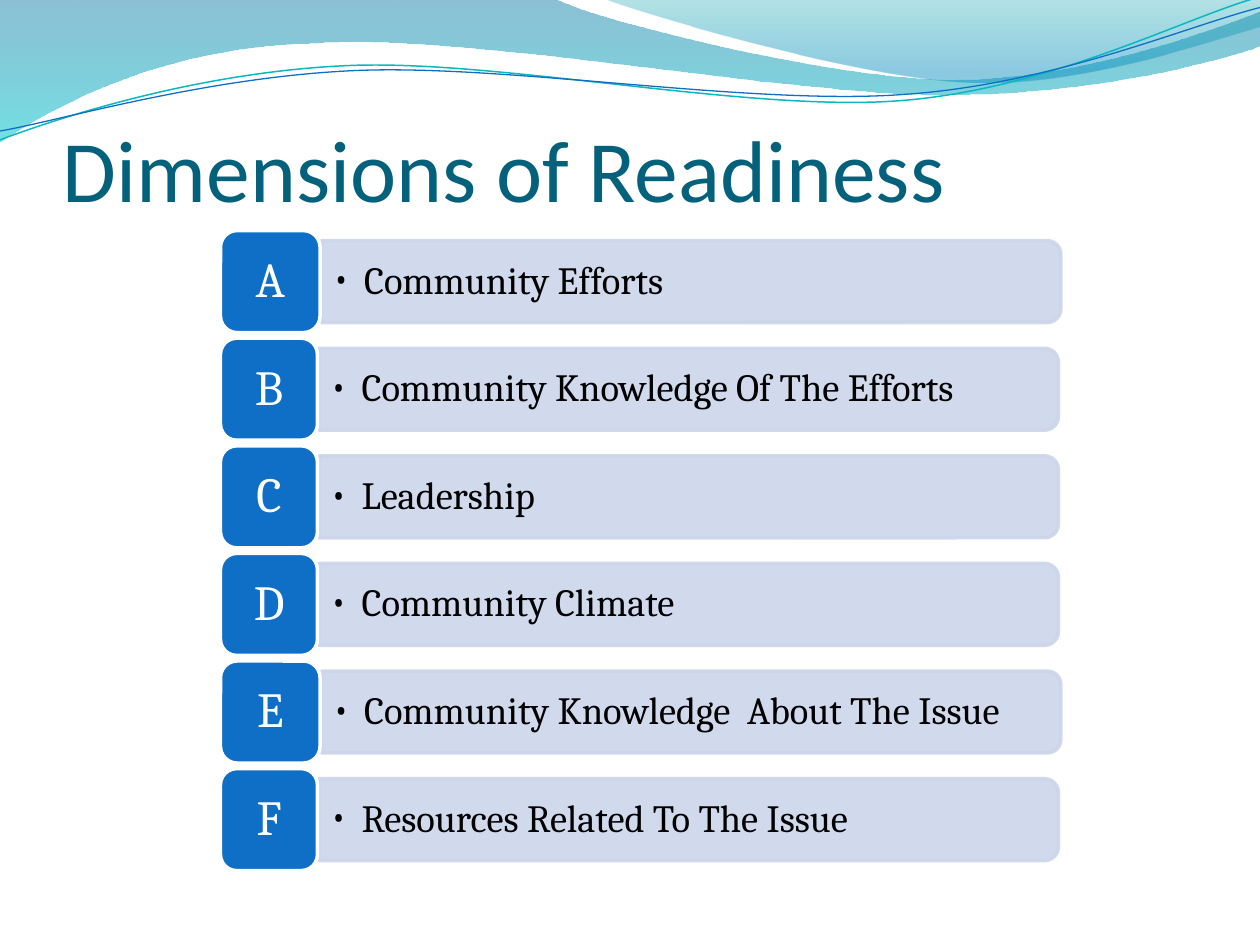
import dataclasses
import math
import typing

import pptx
import pptx.dml.color
import pptx.enum.shapes
import pptx.enum.text
import pptx.oxml
import pptx.oxml.ns
import pptx.util

RGB = pptx.dml.color.RGBColor
SHAPES = pptx.enum.shapes.MSO_SHAPE
ANCHOR = pptx.enum.text.MSO_ANCHOR
ALIGN = pptx.enum.text.PP_ALIGN

DEEP_BLUE = RGB(0x00, 0x74, 0xA1)
AQUA = RGB(0x00, 0xC6, 0xCF)
SEA_GREEN = RGB(0x00, 0xA1, 0xA9)
SKY_BLUE = RGB(0x00, 0x8B, 0xBF)
TEAL = RGB(0x0A, 0xB8, 0xBF)
BLUE = RGB(0x0F, 0x6F, 0xC6)
TITLE_TEAL = RGB(0x04, 0x61, 0x7B)
PALE_BLUE = RGB(0xCC, 0xD5, 0xEA)
WHITE = RGB(0xFF, 0xFF, 0xFF)
BLACK = RGB(0x00, 0x00, 0x00)

SLIDE_WIDTH = pptx.util.Inches(10)
SLIDE_HEIGHT = pptx.util.Inches(7.5)
CELL = SLIDE_WIDTH / 10
LINE_TILT = 2.7

LIST_LEFT = 1.75
LIST_TOP = 1.83
ROW_PITCH = 4.27 / 5
TILE_HEIGHT = 0.81
TILE_INSET = 0.04
BAR_WIDTH = 5.87
BAR_HEIGHT = 0.65
BAR_TEXT_WIDTH = 5.83
BAR_TEXT_HEIGHT = 0.59


@dataclasses.dataclass(frozen=True)
class Stop:
    position: float
    color: RGB
    opacity: int


@dataclasses.dataclass(frozen=True)
class Wave:
    start: tuple[float, float]
    segments: tuple[tuple[float, ...], ...]
    stops: tuple[Stop, ...] = ()
    line_color: typing.Optional[RGB] = None
    line_width: float = 0
    pivot: tuple[float, float] = (0, 0)


@dataclasses.dataclass(frozen=True)
class Dimension:
    letter: str
    label: str
    tile_width: float = 0.77


WAVES = (
    Wave((0, 0), ((4.4, -0.01), (4.76, 0.17, 6.64, 0.63, 7.58, 0.63),
                  (8.53, 0.63, 9.58, 0.26, 10, 0.09), (10.01, 0.36),
                  (9.83, 0.44, 8.7, 0.76, 7.46, 0.75),
                  (6.22, 0.75, 3.82, 0.28, 2.57, 0.34),
                  (1.29, 0.36, 0.46, 0.83, -0.01, 1.13), (0, 0)),
         stops=(Stop(0, DEEP_BLUE, 45), Stop(1, AQUA, 55))),
    Wave((4.79, -0.01), ((5.09, 0.11, 6.82, 0.62, 7.69, 0.65),
                         (8.56, 0.69, 9.61, 0.32, 10, 0.21), (10, 0), (4.79, -0.01)),
         stops=(Stop(0, SEA_GREEN, 30), Stop(0.8, SKY_BLUE, 45))),
    Wave((0, 1.11), ((0.48, 0.93, 1.58, 0.57, 2.77, 0.52),
                     (3.95, 0.47, 5.93, 0.89, 7.13, 0.8),
                     (8.33, 0.71, 9.38, 0.15, 9.98, -0.02)),
         line_color=TEAL, line_width=0.85, pivot=(4.99, 0.58)),
    Wave((0, 1.04), ((0.47, 0.96, 1.64, 0.61, 2.83, 0.56),
                     (4.03, 0.51, 5.97, 0.84, 7.17, 0.75),
                     (8.36, 0.67, 9.41, 0.21, 10, 0.06)),
         line_color=BLUE, line_width=0.75, pivot=(5, 0.59)),
)

DIMENSIONS = (
    Dimension("A", "Community Efforts", 0.79),
    Dimension("B", "Community Knowledge Of The Efforts"),
    Dimension("C", "Leadership"),
    Dimension("D", "Community Climate"),
    Dimension("E", "Community Knowledge  About The Issue", 0.79),
    Dimension("F", "Resources Related To The Issue"),
)


def cells(*lengths: float) -> list[int]:
    return [round(length * CELL) for length in lengths]


def element(tag: str, attributes: str = ""):
    return pptx.oxml.parse_xml(f'<a:{tag} {pptx.oxml.ns.nsdecls("a")} {attributes}/>')


def set_opacity(shape, *percents: int) -> None:
    colors = shape.element.spPr.iter(pptx.oxml.ns.qn("a:srgbClr"))
    for color, percent in zip(colors, percents):
        color.append(element("alpha", f'val="{percent * 1000}"'))


def write(slide, box: tuple[float, ...], text: str, *, font: str, size: float, color: RGB,
          anchor, insets: tuple[float, ...], align=ALIGN.LEFT, spacing: float = 1,
          bullet_indent: float = 0) -> None:
    frame = slide.shapes.add_textbox(*cells(*box)).text_frame
    frame.word_wrap = True
    frame.vertical_anchor = anchor
    (frame.margin_left, frame.margin_top,
     frame.margin_right, frame.margin_bottom) = cells(*insets)
    paragraph = frame.paragraphs[0]
    paragraph.alignment = align
    paragraph.line_spacing = spacing
    run = paragraph.add_run()
    run.text = text
    run.font.name = font
    run.font.size = pptx.util.Pt(size)
    run.font.color.rgb = color
    if bullet_indent:
        paragraph.level = 1
        properties = paragraph._p.get_or_add_pPr()
        indent = cells(bullet_indent)[0]
        properties.set("marL", str(indent))
        properties.set("indent", str(-indent))
        properties.append(element("buFont", f'typeface="{font}"'))
        properties.append(element("buChar", 'char="•"'))


def turn(point: tuple[float, float], pivot: tuple[float, float]) -> list[int]:
    angle = math.radians(LINE_TILT)
    x, y = point[0] - pivot[0], point[1] - pivot[1]
    return cells(pivot[0] + x * math.cos(angle) - y * math.sin(angle),
                 pivot[1] + x * math.sin(angle) + y * math.cos(angle))


def bend(shape, segments: tuple[tuple[float, ...], ...]) -> None:
    corners = iter(list(shape.element.spPr.iter(pptx.oxml.ns.qn("a:lnTo"))))
    for segment in segments:
        first = next(corners)
        if len(segment) == 6:
            curve = element("cubicBezTo")
            first.addprevious(curve)
            for corner in (first, next(corners), next(corners)):
                curve.append(corner[0])
                corner.getparent().remove(corner)


def draw_wave(slide, wave: Wave) -> None:
    points = [wave.start] + [segment[i:i + 2] for segment in wave.segments
                             for i in range(0, len(segment), 2)]
    start, *rest = [cells(*point) if wave.stops else turn(point, wave.pivot) for point in points]
    builder = slide.shapes.build_freeform(*start, scale=1.0)
    builder.add_line_segments(rest, close=bool(wave.stops))
    shape = builder.convert_to_shape()
    bend(shape, wave.segments)
    shape.shadow.inherit = False
    if wave.stops:
        shape.line.fill.background()
        shape.fill.gradient()
        shape.fill.gradient_angle = 270
        for target, stop in zip(shape.fill.gradient_stops, wave.stops):
            target.position = stop.position
            target.color.rgb = stop.color
        set_opacity(shape, *(stop.opacity for stop in wave.stops))
    else:
        shape.rotation = 360 - LINE_TILT
        shape.fill.background()
        shape.line.color.rgb = wave.line_color
        shape.line.width = pptx.util.Pt(wave.line_width)


def draw_block(slide, preset, box: tuple[float, ...], fill: RGB, line: RGB):
    block = slide.shapes.add_shape(preset, *cells(*box))
    block.shadow.inherit = False
    block.fill.solid()
    block.fill.fore_color.rgb = fill
    block.line.color.rgb = line
    block.line.width = pptx.util.Pt(2)
    return block


def draw_dimension(slide, dimension: Dimension, row: int) -> None:
    top = LIST_TOP + row * ROW_PITCH
    middle = top + TILE_HEIGHT / 2
    width = dimension.tile_width
    bar_left = LIST_LEFT + width + 0.01
    bar_box = (bar_left + (BAR_WIDTH - BAR_HEIGHT) / 2, middle - BAR_WIDTH / 2,
               BAR_HEIGHT, BAR_WIDTH)
    bar = draw_block(slide, SHAPES.ROUND_2_SAME_RECTANGLE, bar_box, PALE_BLUE, PALE_BLUE)
    bar.rotation = 90
    set_opacity(bar, 90, 90)
    label_box = (bar_left, middle - BAR_TEXT_HEIGHT / 2, BAR_TEXT_WIDTH, BAR_TEXT_HEIGHT)
    write(slide, label_box, dimension.label, font="Cambria", size=22, color=BLACK,
          anchor=ANCHOR.MIDDLE, insets=(0.09, 0.05, 0.09, 0.05), spacing=0.9, bullet_indent=0.25)
    tile_box = (LIST_LEFT, top, width, TILE_HEIGHT)
    draw_block(slide, SHAPES.ROUNDED_RECTANGLE, tile_box, BLUE, WHITE)
    letter_box = (LIST_LEFT + TILE_INSET, top + TILE_INSET,
                  width - 2 * TILE_INSET, TILE_HEIGHT - 2 * TILE_INSET)
    write(slide, letter_box, dimension.letter, font="Cambria", size=28, color=WHITE,
          anchor=ANCHOR.MIDDLE, insets=(0.12, 0.06, 0.12, 0.06), align=ALIGN.CENTER, spacing=0.9)


def main() -> None:
    """Build the Dimensions of Readiness slide."""
    deck = pptx.Presentation()
    deck.slide_width, deck.slide_height = SLIDE_WIDTH, SLIDE_HEIGHT
    slide = deck.slides.add_slide(deck.slide_layouts[6])
    for wave in WAVES:
        draw_wave(slide, wave)
    write(slide, (0.5, 0.5, 9, 1.25), "Dimensions of Readiness", font="Calibri", size=50,
          color=TITLE_TEAL, anchor=ANCHOR.BOTTOM, insets=(0, 0.05, 0, 0))
    for row, dimension in enumerate(DIMENSIONS):
        draw_dimension(slide, dimension, row)
    deck.save("out.pptx")


if __name__ == "__main__":
    main()
